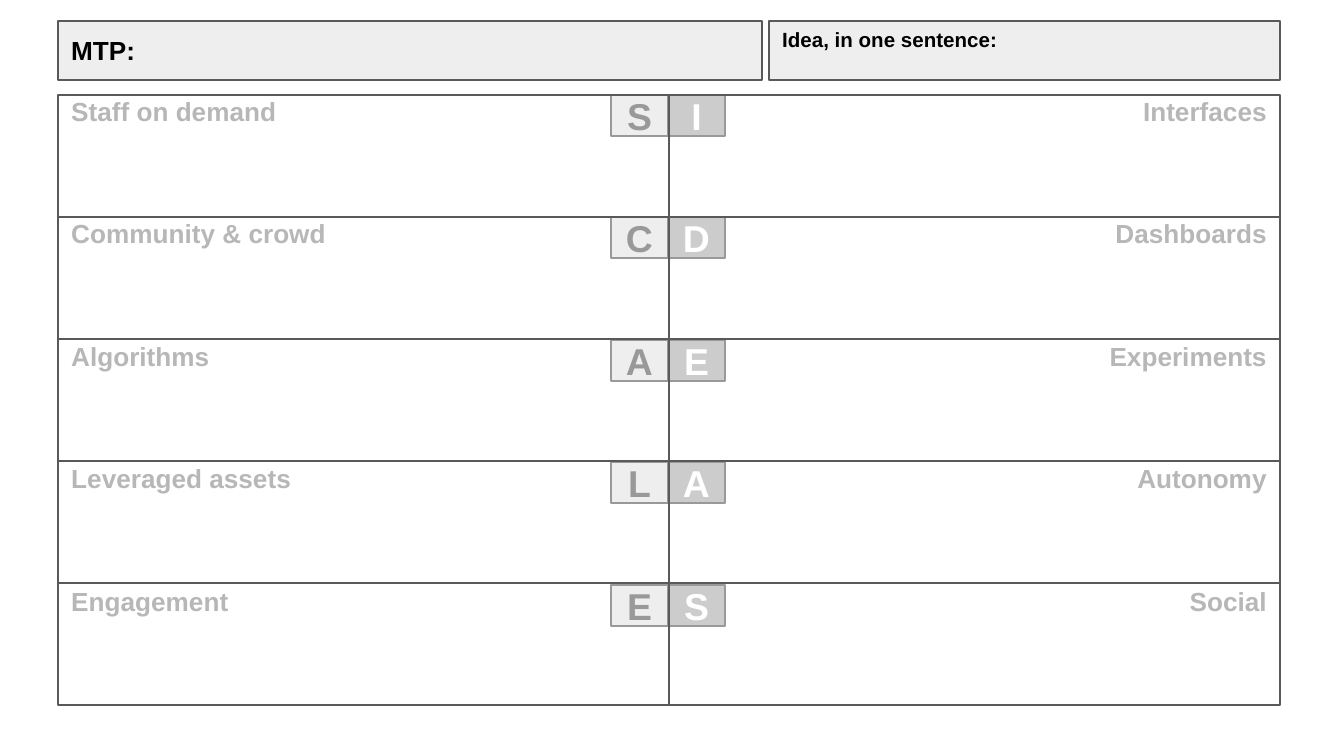
from pptx import Presentation
from pptx.dml.color import RGBColor as RGB
from pptx.enum.shapes import MSO_SHAPE as SHAPE
from pptx.enum.text import MSO_ANCHOR as ANCHOR, PP_ALIGN as ALIGN
from pptx.util import Inches, Pt

PX = Inches(10) / 1344
HUES = {"pale": "EEEEEE", "mid": "CCCCCC", "edge": "999999", "label": "B7B7B7",
        "frame": "595959", "white": "FFFFFF", "black": "000000"}


def add_rect(home, box, fill, line):
    rect = home.add_shape(SHAPE.RECTANGLE, *[round(n * PX) for n in box])
    rect.shadow.inherit = False
    if fill:
        rect.fill.solid()
        rect.fill.fore_color.rgb = RGB.from_string(HUES[fill])
    else:
        rect.fill.background()
    rect.line.color.rgb = RGB.from_string(HUES[line])
    rect.line.width = Pt(0.75)
    return rect


def write(shape, text, size, hue, align):
    frame = shape.text_frame
    frame.word_wrap = True
    frame.vertical_anchor = ANCHOR.MIDDLE
    frame.margin_left = frame.margin_right = Inches(0.1)
    frame.margin_top = frame.margin_bottom = Inches(0.1)
    para = frame.paragraphs[0]
    para.alignment = align
    run = para.add_run()
    run.text = text
    run.font.name = "Arial"
    run.font.size = Pt(size)
    run.font.bold = True
    run.font.color.rgb = RGB.from_string(HUES[hue])
    return frame


deck = Presentation()
deck.slide_width = round(1344 * PX)
deck.slide_height = round(756 * PX)
slide = deck.slides.add_slide(deck.slide_layouts[6])
shapes = slide.shapes

# Two columns: labels, letters, tag left, label left, tag fill, letter hue, align
COLS = [
    (["Staff on demand", "Community & crowd", "Algorithms",
      "Leveraged assets", "Engagement"],
     "SCALE", 611, 58, "pale", "edge", ALIGN.LEFT),
    (["Interfaces", "Dashboards", "Experiments", "Autonomy", "Social"],
     "IDEAS", 668, 932, "mid", "white", ALIGN.RIGHT),
]
TOP = 95

# Letter tags and labels
for names, word, tag_x, name_x, fill, hue, align in COLS:
    for row, (name, char) in enumerate(zip(names, word)):
        y = TOP + row * 245 // 2
        tag = add_rect(shapes, (tag_x, y, 57, 41), fill, "edge")
        write(tag, char, 20, hue, ALIGN.CENTER)
        box = [round(n * PX) for n in (name_x, y, 348, 32)]
        write(shapes.add_textbox(*box), name, 14, "label", align)

# Grid of open cells
grid = shapes.add_group_shape()
for x in (58, 669):
    for row in range(5):
        add_rect(grid.shapes, (x, TOP + row * 122, 611, 122), None, "frame")

# Header boxes
goal = add_rect(shapes, (58, 21, 704, 59), "pale", "frame")
write(goal, "MTP:", 14, "black", ALIGN.LEFT)
idea = add_rect(shapes, (769, 21, 511, 59), "pale", "frame")
frame = write(idea, "Idea, in one sentence:", 11, "black", ALIGN.LEFT)
frame.vertical_anchor = ANCHOR.TOP
frame.margin_top = round(6 * PX)

deck.save("out.pptx")
